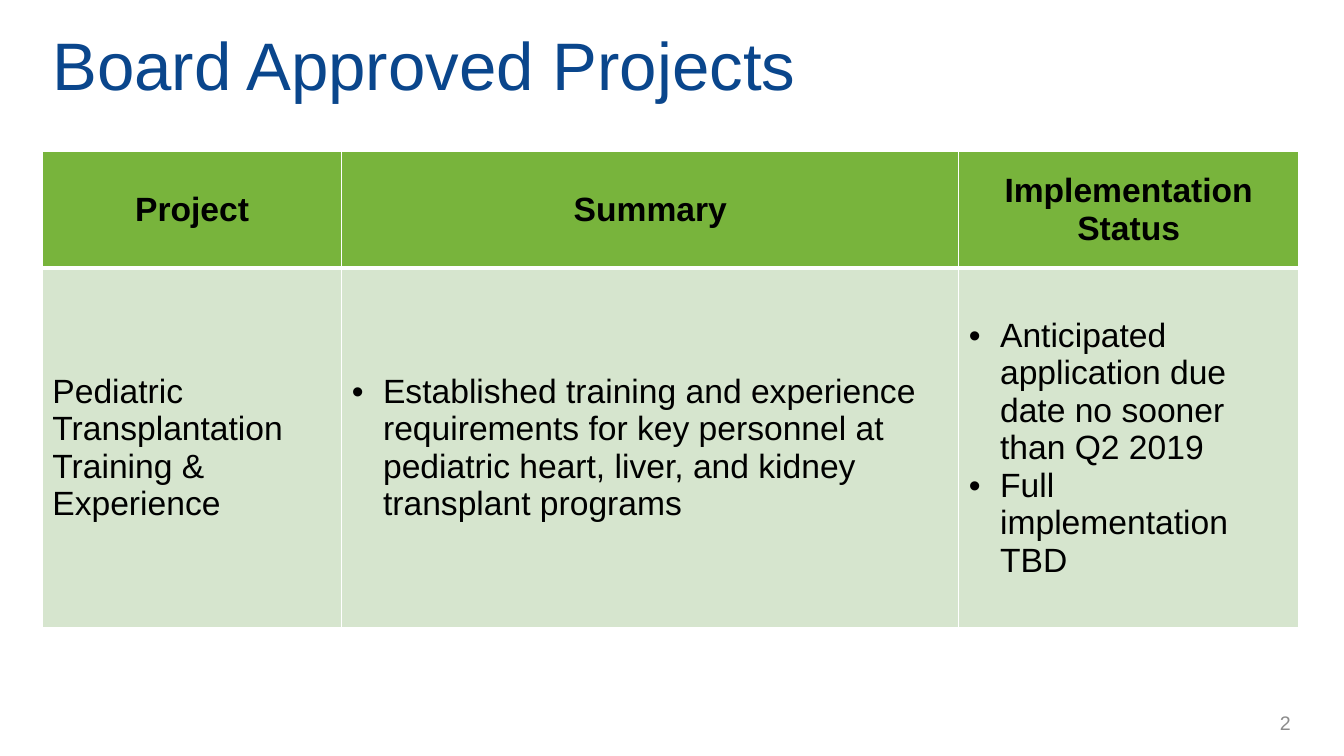
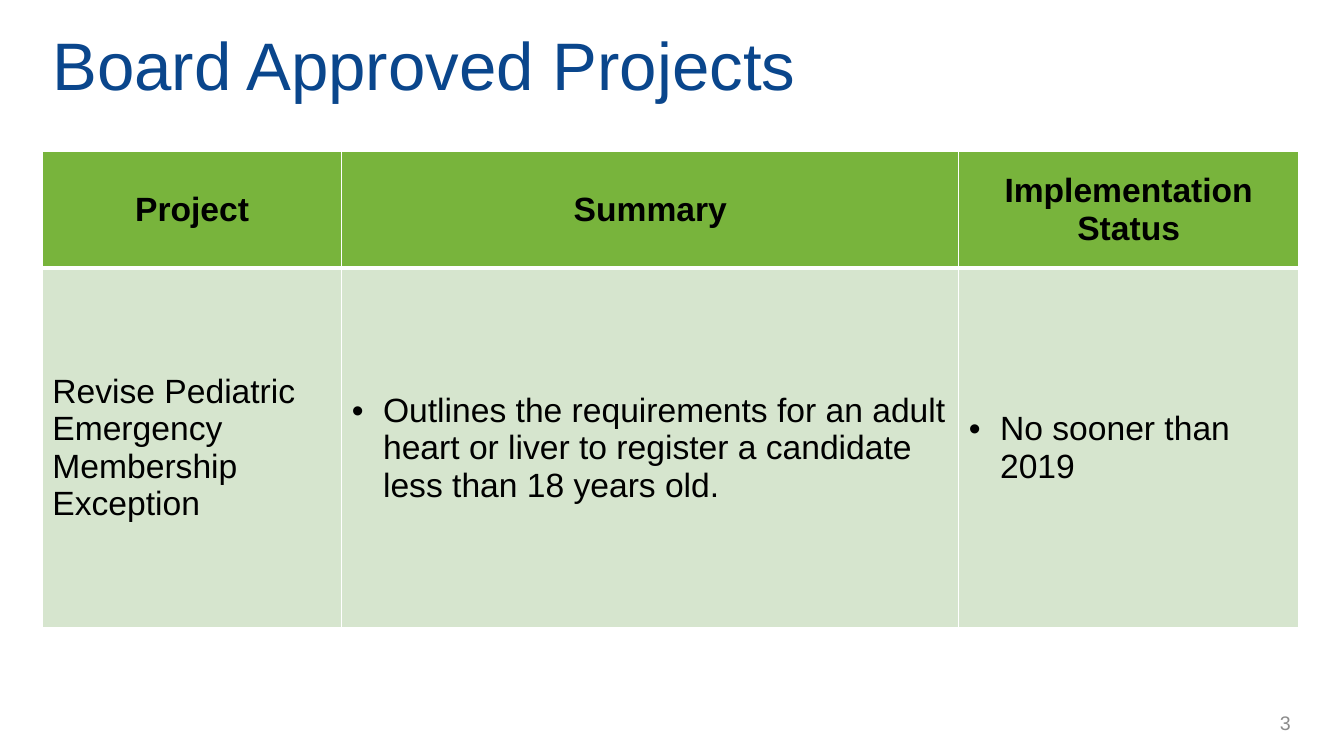
"""Build the slides that list board approved projects."""
from lxml import etree
from pptx import Presentation
from pptx.dml.color import RGBColor
from pptx.enum.text import MSO_ANCHOR, PP_ALIGN
from pptx.oxml.ns import qn
from pptx.util import Inches, Pt

MIDDLE = MSO_ANCHOR.MIDDLE
LEFT, CENTER, RIGHT = PP_ALIGN.LEFT, PP_ALIGN.CENTER, PP_ALIGN.RIGHT
FONT = "Arial"
COLORS = {
    "title": "0A468C",
    "number": "8C8C8C",
    "text": "000000",
    "header": "78B43C",
    "body": "D6E5CE",
    "border": "FFFFFF",
}
TITLE = "Board Approved Projects"
HEADERS = ["Project", "Summary", "Implementation Status"]
COLUMN_WIDTHS = [2.97, 6.12, 3.37]
ROW_HEIGHTS = [1.16, 3.57]
MARGIN_LEFT = 0.42
BULLET_INDENT = Inches(0.31)
THIN, THICK = Pt(1), Pt(3)

PROJECTS = [
    (
        "Pediatric Transplantation Training & Experience",
        ["Established training and experience requirements for key personnel "
         "at pediatric heart, liver, and kidney transplant programs"],
        ["Anticipated application due date no sooner than Q2 2019",
         "Full implementation TBD"],
    ),
    (
        "Revise Pediatric Emergency Membership Exception",
        ["Outlines the requirements for an adult heart or liver to register "
         "a candidate less than 18 years old."],
        ["No sooner than 2019"],
    ),
]


def format_paragraph(paragraph, size, color, align=LEFT, bold=False):
    """Set the alignment of a paragraph and the font of its runs."""
    paragraph.alignment = align
    for run in paragraph.runs:
        run.font.name = FONT
        run.font.size = Pt(size)
        run.font.bold = bold
        run.font.color.rgb = RGBColor.from_string(COLORS[color])


def add_text(slide, box, text, size, color, align=LEFT):
    """Add a vertically centred line of text."""
    shape = slide.shapes.add_textbox(*map(Inches, box))
    frame = shape.text_frame
    frame.word_wrap = True
    frame.vertical_anchor = MIDDLE
    frame.text = text
    format_paragraph(frame.paragraphs[0], size, color, align)


def add_bullet(paragraph):
    """Give a paragraph a round bullet with a hanging indent."""
    properties = paragraph._p.get_or_add_pPr()
    properties.set("marL", str(BULLET_INDENT))
    properties.set("indent", str(-BULLET_INDENT))
    etree.SubElement(properties, qn("a:buFont"), typeface=FONT)
    etree.SubElement(properties, qn("a:buChar"), char="•")


def set_borders(cell, top, bottom):
    """Draw the four borders of a cell, with thin sides."""
    properties = cell._tc.get_or_add_tcPr()
    edges = {"a:lnL": THIN, "a:lnR": THIN, "a:lnT": top, "a:lnB": bottom}
    for position, (tag, width) in enumerate(edges.items()):
        line = etree.Element(qn(tag), w=str(width))
        fill = etree.SubElement(line, qn("a:solidFill"))
        etree.SubElement(fill, qn("a:srgbClr"), val=COLORS["border"])
        properties.insert(position, line)


def fill_cell(cell, lines, header=False, bulleted=False):
    """Write the lines of a cell and style it as header or body."""
    cell.vertical_anchor = MIDDLE
    cell.fill.solid()
    fill_color = COLORS["header" if header else "body"]
    cell.fill.fore_color.rgb = RGBColor.from_string(fill_color)
    set_borders(cell, THIN if header else THICK, THICK if header else THIN)
    cell.text_frame.text = "\n".join(lines)
    for paragraph in cell.text_frame.paragraphs:
        if bulleted:
            add_bullet(paragraph)
        format_paragraph(paragraph, 24, "text", CENTER if header else LEFT, header)


def add_project_table(slide, project):
    """Add the table with a header row and one project."""
    name, summary, status = project
    frame = slide.shapes.add_table(
        len(ROW_HEIGHTS), len(COLUMN_WIDTHS), Inches(MARGIN_LEFT), Inches(1.5),
        Inches(sum(COLUMN_WIDTHS)), Inches(sum(ROW_HEIGHTS)))
    table = frame.table
    table.horz_banding = False
    for row, height in zip(table.rows, ROW_HEIGHTS):
        row.height = Inches(height)
    for index, lines in enumerate([[name], summary, status]):
        table.columns[index].width = Inches(COLUMN_WIDTHS[index])
        fill_cell(table.cell(0, index), [HEADERS[index]], header=True)
        fill_cell(table.cell(1, index), lines, bulleted=index > 0)


def add_project_slide(presentation, project, number):
    """Add a slide with title, project table and slide number."""
    slide = presentation.slides.add_slide(presentation.slide_layouts[6])
    add_project_table(slide, project)
    add_text(slide, (MARGIN_LEFT, 0.17, 12.75, 0.93), TITLE, 48, "title")
    add_text(slide, (10.64, 6.97, 2.26, 0.4), str(number), 14, "number", RIGHT)


def main():
    """Build and save the presentation."""
    presentation = Presentation()
    presentation.slide_width = Inches(13.33)
    presentation.slide_height = Inches(7.5)
    for number, project in enumerate(PROJECTS, start=2):
        add_project_slide(presentation, project, number)
    presentation.save("out.pptx")


if __name__ == "__main__":
    main()
